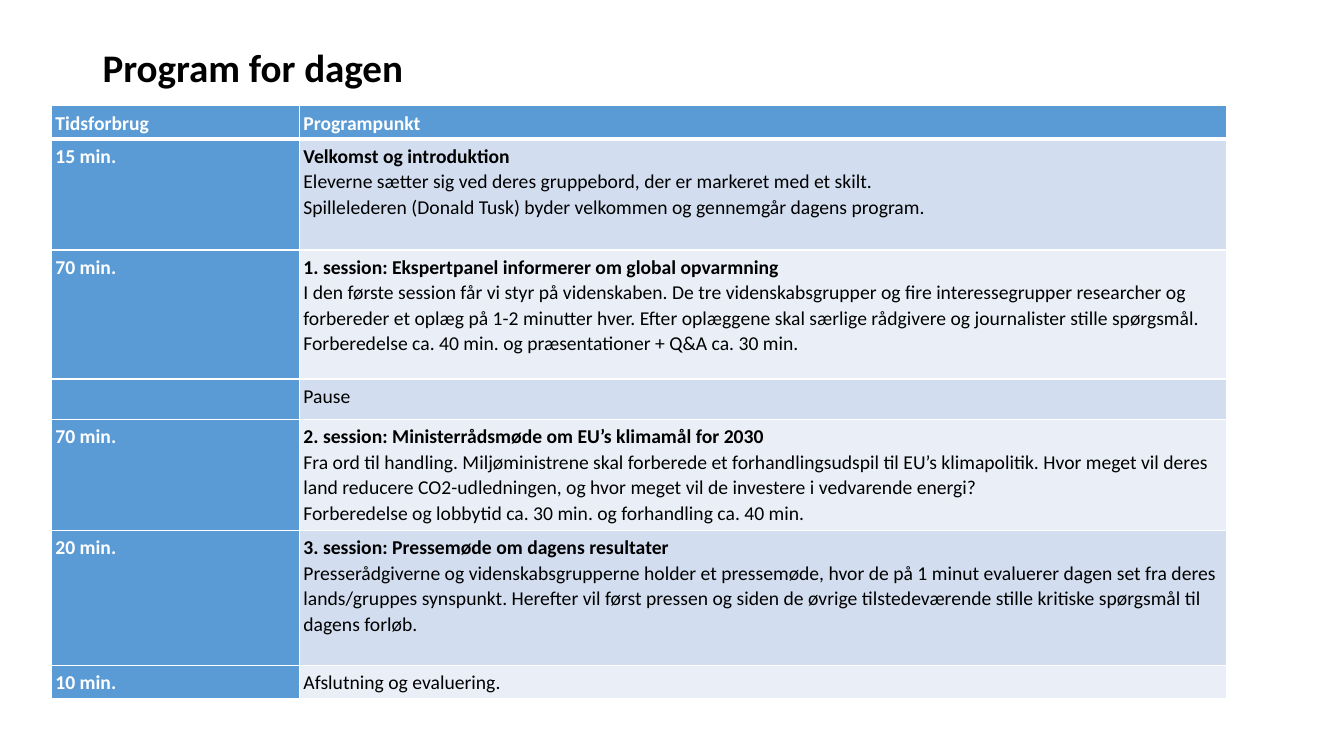
from lxml.etree import SubElement
from pptx import Presentation
from pptx.dml.color import RGBColor
from pptx.enum.text import MSO_ANCHOR
from pptx.oxml.ns import qn
from pptx.util import Inches, Pt

BLACK = RGBColor(0x00, 0x00, 0x00)
WHITE = RGBColor(0xFF, 0xFF, 0xFF)
BLUE = RGBColor(0x5B, 0x9B, 0xD5)
BANDS = [RGBColor(0xD2, 0xDE, 0xEF), RGBColor(0xEA, 0xEF, 0xF7)]

# Height in grid rows, time, heading, body paragraphs
PROGRAM = [
    (11, "15 min.", "Velkomst og introduktion", [
        "Eleverne sætter sig ved deres gruppebord, der er markeret med et skilt.",
        "Spillelederen (Donald Tusk) byder velkommen og gennemgår dagens program."]),
    (12.8, "70 min.", "1. session: Ekspertpanel informerer om global opvarmning", [
        "I den første session får vi styr på videnskaben. De tre videnskabsgrupper og fire "
        "interessegrupper researcher og forbereder et oplæg på 1-2 minutter hver. Efter "
        "oplæggene skal særlige rådgivere og journalister stille spørgsmål.",
        "Forberedelse ca. 40 min. og præsentationer + Q&A ca. 30 min."]),
    (4, "", "", ["Pause"]),
    (11, "70 min.", "2. session: Ministerrådsmøde om EU’s klimamål for 2030", [
        "Fra ord til handling. Miljøministrene skal forberede et forhandlingsudspil til EU’s "
        "klimapolitik. Hvor meget vil deres land reducere CO2-udledningen, og hvor meget vil "
        "de investere i vedvarende energi?",
        "Forberedelse og lobbytid ca. 30 min. og forhandling ca. 40 min."]),
    (13.4, "20 min.", "3. session: Pressemøde om dagens resultater", [
        "Presserådgiverne og videnskabsgrupperne holder et pressemøde, hvor de på 1 minut "
        "evaluerer dagen set fra deres lands/gruppes synspunkt. Herefter vil først pressen og "
        "siden de øvrige tilstedeværende stille kritiske spørgsmål til dagens forløb."]),
    (3.3, "10 min.", "", ["Afslutning og evaluering."]),
]


class Deck:
    """Style and current slide; lengths are units of a 0.1 inch grid."""
    font = "Calibri"
    unit = Inches(0.1)

    def __init__(self):
        self.prs = Presentation()
        self.prs.slide_width, self.prs.slide_height = Inches(13.33), Inches(7.5)
        self.s = self.prs.slides.add_slide(self.prs.slide_layouts[6])

    def grid(self, *lengths):
        return [round(n * self.unit) for n in lengths]

    def add_lines(self, tf, lines, size, color, spacing):
        """Fill a text frame with (text, bold) lines."""
        for i, (text, bold) in enumerate(lines):
            p = tf.paragraphs[0] if i == 0 else tf.add_paragraph()
            p.line_spacing = spacing
            r = p.add_run()
            r.text = text
            style = {"name": self.font, "size": Pt(size), "bold": bold}
            for key, value in style.items():
                setattr(r.font, key, value)
            r.font.color.rgb = color

    def title(self, text, *box):
        tf = self.s.shapes.add_textbox(*self.grid(*box)).text_frame
        frame = {"word_wrap": True, "vertical_anchor": MSO_ANCHOR.TOP,
                 "margin_top": Inches(0.08)}
        for key, value in frame.items():
            setattr(tf, key, value)
        self.add_lines(tf, [(text, True)], 27.9, BLACK, 0.9)

    def border(self, cell, widths):
        tcPr = cell._tc.get_or_add_tcPr()
        for side, width in widths.items():
            ln = SubElement(tcPr, qn(f"a:ln{side}"), w=str(Pt(width)))
            fill = SubElement(ln, qn("a:solidFill"))
            SubElement(fill, qn("a:srgbClr"), val=str(WHITE))

    def cell(self, cell, lines, color, fill, widths):
        for side in ("left", "top", "right", "bottom"):
            setattr(cell, f"margin_{side}", Inches(0.04))
        self.border(cell, widths)
        cell.fill.solid()
        cell.fill.fore_color.rgb = fill
        self.add_lines(cell.text_frame, lines, 14, color, 1.07)

    def table(self, left, top, cols, heights, rows):
        """First row and first column are headers; other cells are banded."""
        box = self.grid(left, top, sum(cols), sum(heights))
        tbl = self.s.shapes.add_table(len(rows), len(cols), *box).table
        for col, width in zip(tbl.columns, self.grid(*cols)):
            col.width = width
        for row, height in zip(tbl.rows, self.grid(*heights)):
            row.height = height
        for i, row in enumerate(rows):
            widths = {"L": 1, "R": 1, "T": 3 if i == 1 else 1, "B": 3 if i == 0 else 1}
            for j, lines in enumerate(row):
                header = i == 0 or j == 0
                color, fill = (WHITE, BLUE) if header else (BLACK, BANDS[(i - 1) % 2])
                self.cell(tbl.cell(i, j), lines, color, fill, widths)


def main():
    deck = Deck()

    # Heading
    deck.title("Program for dagen", 9.2, 4, 77.4, 6)

    # Programme table
    heights, rows = [3.3], [[[("Tidsforbrug", True)], [("Programpunkt", True)]]]
    for height, time, heading, body in PROGRAM:
        heights.append(height)
        rows.append([[(time, True)] if time else [],
                     ([(heading, True)] if heading else []) + [(t, False) for t in body]])
    deck.table(5.1, 10.5, [24.6, 92], heights, rows)

    deck.prs.save("out.pptx")


if __name__ == "__main__":
    main()
